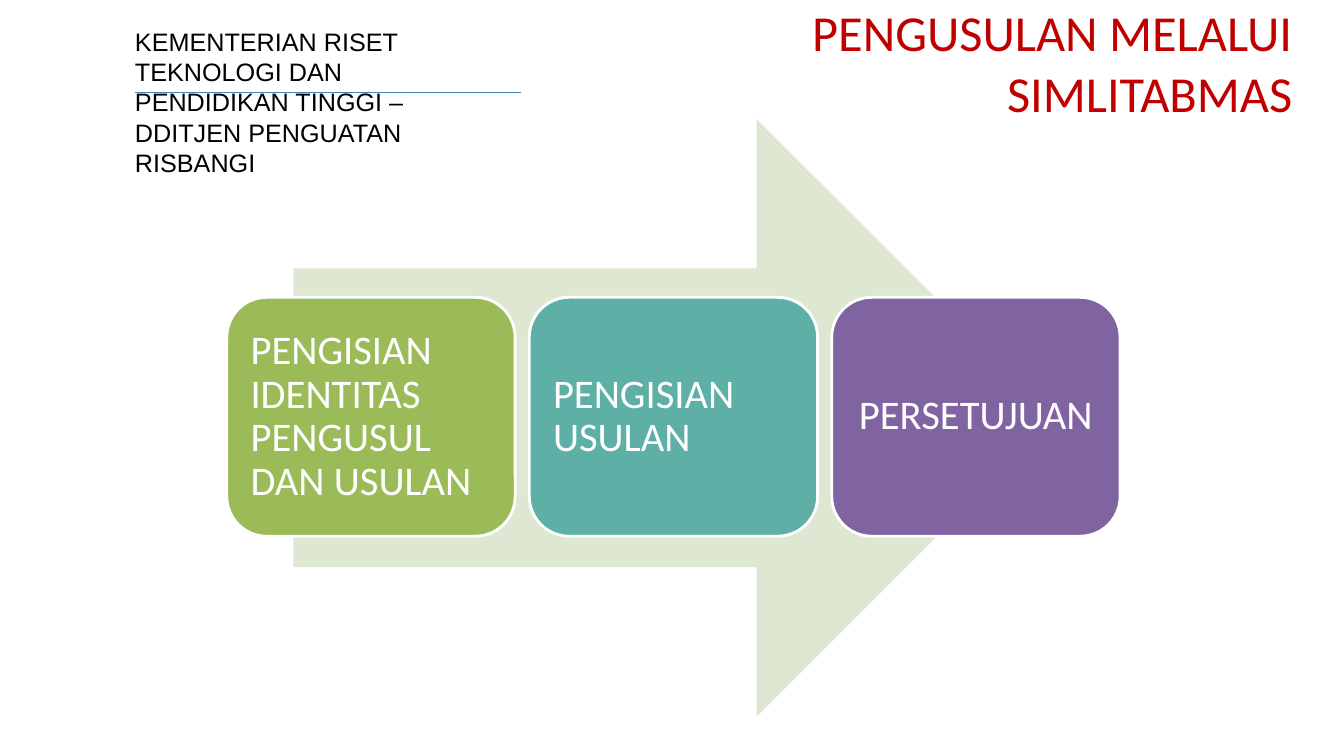
from dataclasses import dataclass

from lxml import etree
from pptx import Presentation
from pptx import util as u
from pptx.dml.color import RGBColor
from pptx.enum import shapes, text
from pptx.oxml.ns import qn

EMU_PER_PX = 9144  # 100 px to the inch


def px(length: int) -> u.Emu:
    return u.Emu(length * EMU_PER_PX)


@dataclass(frozen=True)
class Theme:
    title: str = "C00000"
    header: str = "000000"
    rule: str = "4B7EBC"
    arrow: str = "DEE7D1"
    white: str = "FFFFFF"
    heading_font: str = "Calibri"
    header_font: str = "Arial"
    title_size: int = 36
    header_size: int = 18
    step_size: int = 29


@dataclass(frozen=True)
class Box:
    left: int
    top: int
    width: int
    height: int

    def emu(self) -> tuple[u.Emu, ...]:
        return px(self.left), px(self.top), px(self.width), px(self.height)


@dataclass(frozen=True)
class Step:
    label: str
    fill: str
    align: text.PP_ALIGN = text.PP_ALIGN.LEFT


THEME = Theme()
FIRST_STEP = Box(225, 295, 286, 237)
STEP_PITCH = 300
STEPS = (
    Step("PENGISIAN IDENTITAS PENGUSUL DAN USULAN", "9BBB59"),
    Step("PENGISIAN USULAN", "5EAFA6"),
    Step("PERSETUJUAN", "8064A2", text.PP_ALIGN.CENTER),
)


def write(shape, words: str, font: str, size: int, color: str,
          align: text.PP_ALIGN = text.PP_ALIGN.LEFT):
    frame = shape.text_frame
    frame.word_wrap = True
    frame.text = words
    paragraph = frame.paragraphs[0]
    paragraph.alignment = align
    paragraph.font.name = font
    paragraph.font.size = u.Pt(size)
    paragraph.font.color.rgb = RGBColor.from_string(color)
    return paragraph


def add_block(slide, kind: shapes.MSO_SHAPE, box: Box, fill: str):
    """Add a flat filled shape without an outline."""
    shape = slide.shapes.add_shape(kind, *box.emu())
    shape.shadow.inherit = False
    shape.fill.solid()
    shape.fill.fore_color.rgb = RGBColor.from_string(fill)
    shape.line.fill.background()
    return shape


def add_title(slide, words: str, box: Box) -> None:
    title = slide.shapes.title
    title.left, title.top, title.width, title.height = box.emu()
    write(title, words, THEME.heading_font, THEME.title_size, THEME.title, text.PP_ALIGN.RIGHT)
    title.text_frame.auto_size = text.MSO_AUTO_SIZE.NONE
    title.text_frame.vertical_anchor = text.MSO_ANCHOR.MIDDLE


def add_step(slide, step: Step, box: Box) -> None:
    shape = add_block(slide, shapes.MSO_SHAPE.ROUNDED_RECTANGLE, box, step.fill)
    shape.line.color.rgb = RGBColor.from_string(THEME.white)
    shape.line.width = u.Pt(2)
    frame = shape.text_frame
    frame.margin_left = frame.margin_right = px(12)
    frame.margin_top = frame.margin_bottom = px(12)
    frame.vertical_anchor = text.MSO_ANCHOR.MIDDLE
    paragraph = write(shape, step.label, THEME.heading_font, THEME.step_size,
                      THEME.white, step.align)
    paragraph.line_spacing = 0.9


def add_header(slide, words: str, box: Box) -> None:
    header = slide.shapes.add_textbox(*box.emu())
    write(header, words, THEME.header_font, THEME.header_size, THEME.header)


def add_rule(slide, left: int, right: int, y: int) -> None:
    rule = slide.shapes.add_connector(
        shapes.MSO_CONNECTOR.STRAIGHT, px(left), px(y), px(right), px(y))
    rule.line.color.rgb = RGBColor.from_string(THEME.rule)
    rule.line.width = u.Pt(0.75)
    etree.SubElement(rule._element.spPr, qn("a:effectLst"))


def main() -> None:
    presentation = Presentation()
    presentation.slide_width, presentation.slide_height = px(1333), px(750)
    slide = presentation.slides.add_slide(presentation.slide_layouts.get_by_name("Title Only"))

    add_title(slide, "PENGUSULAN MELALUI SIMLITABMAS", Box(659, 36, 633, 51))
    add_block(slide, shapes.MSO_SHAPE.RIGHT_ARROW, Box(291, 118, 756, 593), THEME.arrow)
    for index, step in enumerate(STEPS):
        left = FIRST_STEP.left + index * STEP_PITCH
        add_step(slide, step, Box(left, FIRST_STEP.top, FIRST_STEP.width, FIRST_STEP.height))
    add_header(
        slide,
        "KEMENTERIAN RISET TEKNOLOGI DAN PENDIDIKAN TINGGI – DDITJEN PENGUATAN RISBANGI",
        Box(124, 21, 325, 71))
    add_rule(slide, 134, 517, 92)

    presentation.save("out.pptx")


if __name__ == "__main__":
    main()
